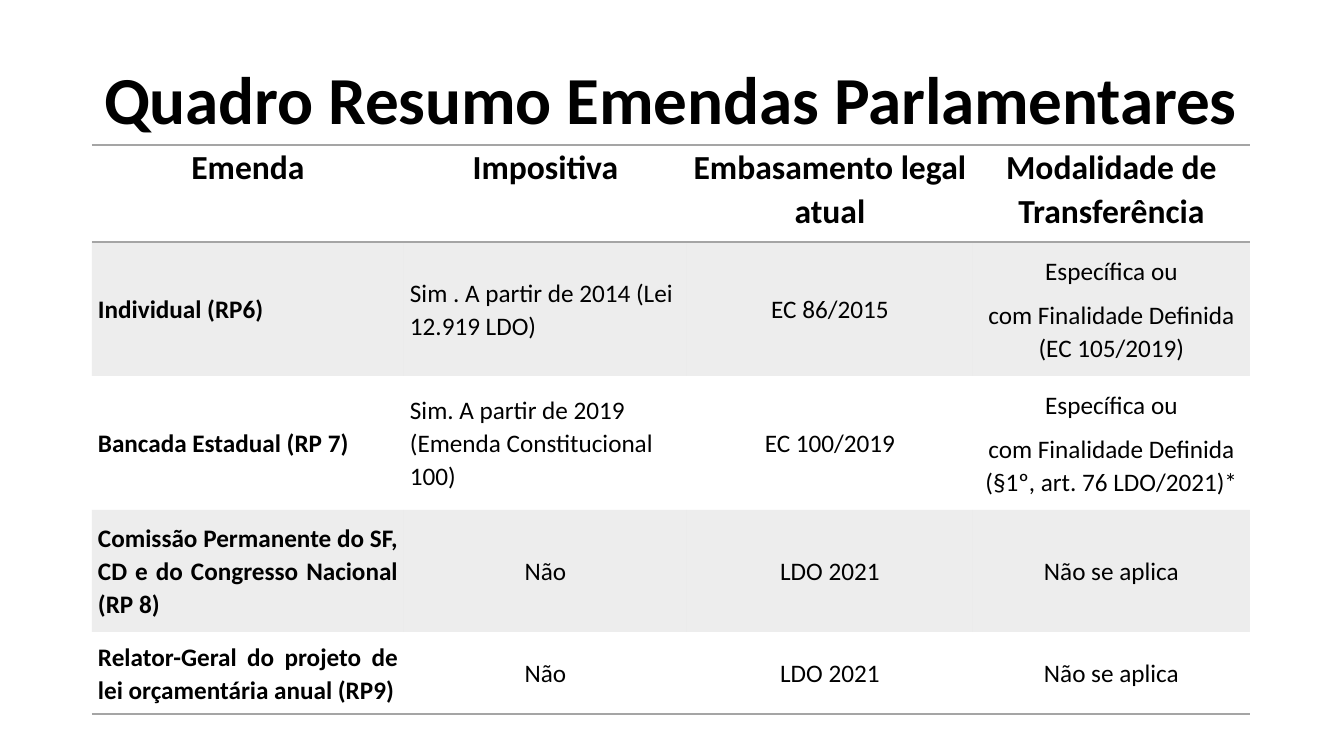
from dataclasses import dataclass

import pptx
import pptx.dml.color
import pptx.enum.text
import pptx.oxml.ns
import pptx.oxml.xmlchemy
import pptx.util
from lxml import etree

SLIDE_WIDTH, SLIDE_HEIGHT = 1344, 756
EMU_PER_PX = 12192000 / SLIDE_WIDTH
COLORS = {"text": "000000", "grey": "A5A5A5"}
FONT = "Calibri"
NO_GRID_STYLE = "{2D5ABB26-0587-4C30-8999-92F81FD0307C}"
COLUMN_WIDTHS = (312, 283, 286, 277)
BAND_OPACITY = 20000
RULE_WIDTH = pptx.util.Pt(1)

ALIGN = pptx.enum.text.PP_ALIGN
ANCHOR = pptx.enum.text.MSO_ANCHOR
qn = pptx.oxml.ns.qn


@dataclass(frozen=True)
class AmendmentRow:
    height: int
    texts: tuple[str, ...]
    name_align: ALIGN = ALIGN.LEFT
    binding_align: ALIGN = ALIGN.CENTER
    size: int = 18
    header: bool = False
    banded: bool = False
    rules: tuple[str, ...] = ()


ROWS = (
    AmendmentRow(97, ("Emenda", "Impositiva", "Embasamento legal atual",
                      "Modalidade de Transferência"),
                 name_align=ALIGN.CENTER, size=24, header=True,
                 rules=("a:lnT", "a:lnB")),
    AmendmentRow(134, ("Individual (RP6)", "Sim . A partir de 2014 (Lei 12.919 LDO)",
                       "EC 86/2015",
                       "Específica ou\ncom Finalidade Definida (EC 105/2019)"),
                 binding_align=ALIGN.LEFT, banded=True),
    AmendmentRow(134, ("Bancada Estadual (RP 7)",
                       "Sim. A partir de 2019 (Emenda Constitucional 100)",
                       "EC 100/2019",
                       "Específica ou\ncom Finalidade Definida (§1º, art. 76 LDO/2021)*"),
                 binding_align=ALIGN.LEFT),
    AmendmentRow(122, ("Comissão Permanente do SF, CD e do Congresso Nacional (RP 8)",
                       "Não", "LDO 2021", "Não se aplica"),
                 name_align=ALIGN.JUSTIFY, banded=True),
    AmendmentRow(82, ("Relator-Geral do projeto de lei orçamentária anual (RP9)",
                      "Não", "LDO 2021", "Não se aplica"),
                 name_align=ALIGN.JUSTIFY, rules=("a:lnB",)),
)


def px(length: int) -> int:
    return round(length * EMU_PER_PX)


def apply(target: object, values: dict[str, object]) -> None:
    for name, value in values.items():
        setattr(target, name, value)


def format_font(font: pptx.text.text.Font, size: int, bold: bool) -> None:
    apply(font, {"name": FONT, "size": pptx.util.Pt(size), "bold": bold})
    font.color.rgb = pptx.dml.color.RGBColor.from_string(COLORS["text"])


def add_rule(cell: pptx.table._Cell, side: str) -> None:
    line = etree.SubElement(cell._tc.get_or_add_tcPr(), qn(side), w=str(RULE_WIDTH))
    fill = etree.SubElement(line, qn("a:solidFill"))
    etree.SubElement(fill, qn("a:srgbClr"), val=COLORS["grey"])


def fill_cell(cell: pptx.table._Cell, banded: bool) -> None:
    if not banded:
        cell.fill.background()
        return
    cell.fill.solid()
    cell.fill.fore_color.rgb = pptx.dml.color.RGBColor.from_string(COLORS["grey"])
    color = cell._tc.get_or_add_tcPr().find(".//" + qn("a:srgbClr"))
    etree.SubElement(color, qn("a:alpha"), val=str(BAND_OPACITY))


def draw_cell(cell: pptx.table._Cell, row: AmendmentRow, column: int) -> None:
    cell.text = row.texts[column]
    apply(cell, {"margin_left": px(6), "margin_right": px(6),
                 "margin_top": 0, "margin_bottom": 0,
                 "vertical_anchor": ANCHOR.TOP if row.header else ANCHOR.MIDDLE})
    aligns = (row.name_align, row.binding_align, ALIGN.CENTER, ALIGN.CENTER)
    for paragraph in cell.text_frame.paragraphs:
        apply(paragraph, {"alignment": aligns[column], "line_spacing": 1.07,
                          "space_after": pptx.util.Pt(8)})
        for run in paragraph.runs:
            format_font(run.font, row.size, row.header or column == 0)
    for side in row.rules:
        add_rule(cell, side)
    fill_cell(cell, row.banded)


def draw_title(slide: pptx.slide.Slide) -> None:
    title = slide.shapes.title
    apply(title, {"left": px(93), "top": px(20), "width": px(1159), "height": px(166)})
    frame = title.text_frame
    frame.text = "Quadro Resumo Emendas Parlamentares"
    apply(frame, {"word_wrap": True, "vertical_anchor": ANCHOR.MIDDLE, "margin_right": 0,
                  "auto_size": pptx.enum.text.MSO_AUTO_SIZE.NONE})
    heading = frame.paragraphs[0]
    apply(heading, {"alignment": ALIGN.LEFT, "line_spacing": 0.9,
                    "space_after": pptx.util.Pt(6)})
    heading._p.get_or_add_pPr().set("marL", str(px(1)))
    format_font(heading.runs[0].font, 48, True)
    heading.runs[0]._r.get_or_add_rPr().set("spc", "-10")


def draw_summary(slide: pptx.slide.Slide) -> None:
    frame = slide.shapes.add_table(
        len(ROWS), len(COLUMN_WIDTHS), px(92), px(145),
        px(sum(COLUMN_WIDTHS)), px(sum(row.height for row in ROWS)))
    summary = frame.table
    apply(summary, {"first_row": False, "horz_banding": False})
    frame.element.find(".//" + qn("a:tableStyleId")).text = NO_GRID_STYLE
    for column, width in zip(summary.columns, COLUMN_WIDTHS):
        column.width = px(width)
    for row_index, row in enumerate(ROWS):
        summary.rows[row_index].height = px(row.height)
        for column_index in range(len(COLUMN_WIDTHS)):
            draw_cell(summary.cell(row_index, column_index), row, column_index)


def main() -> None:
    deck = pptx.Presentation()
    apply(deck, {"slide_width": px(SLIDE_WIDTH), "slide_height": px(SLIDE_HEIGHT)})
    slide = deck.slides.add_slide(deck.slide_layouts.get_by_name("Title Only"))
    # Heading
    draw_title(slide)
    # Amendments table
    draw_summary(slide)
    deck.save("out.pptx")


if __name__ == "__main__":
    main()
